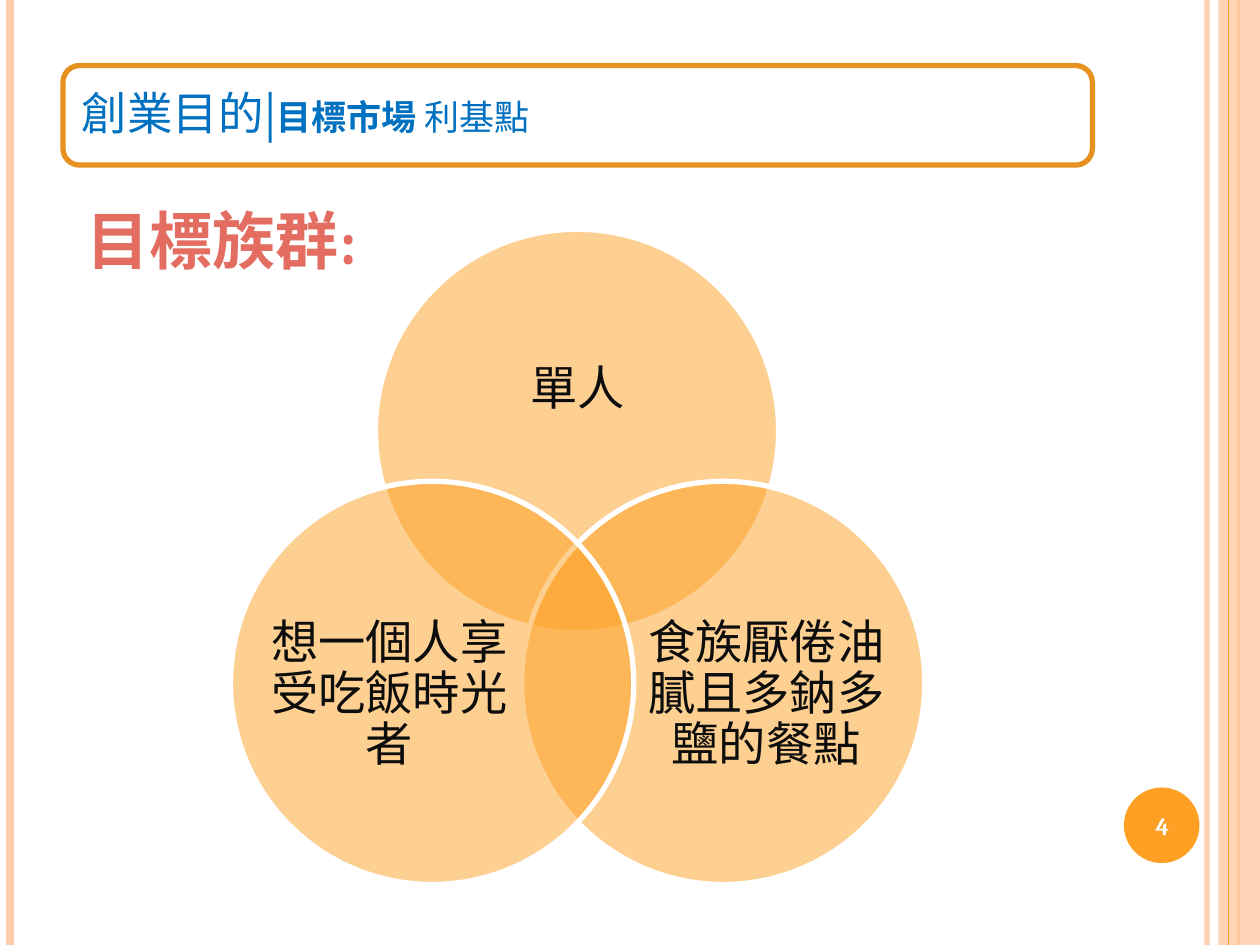
"""Build the target market slide with its three-circle Venn diagram."""
from lxml import etree
from pptx import Presentation
from pptx import util as u
from pptx.dml.color import RGBColor
from pptx.enum import shapes, text
from pptx.oxml import ns

SANS, SERIF = "Noto Sans CJK SC", "Cambria"
ORANGE, PEACH, WHITE, BLUE = "FDA023", "FECDAC", "FFFFFF", "0070C0"


def paint(fill, color, opacity=100):
    """Give a shape, line or font fill a solid colour."""
    fill.solid()
    fill.fore_color.rgb = RGBColor.from_string(color)
    if opacity < 100:
        color_node = fill._xPr.find(".//" + ns.qn("a:srgbClr"))
        etree.SubElement(color_node, ns.qn("a:alpha"), val=str(opacity * 1000))


def add_text(box, runs, font_name, color, align, margins=(0, 0), spacing=1.0,
             anchor=text.MSO_ANCHOR.MIDDLE):
    """Add a text box whose runs are (wording, size, bold)."""
    frame = slide.shapes.add_textbox(*map(u.Inches, box)).text_frame
    frame.word_wrap = True
    frame.vertical_anchor = anchor
    frame.margin_left = frame.margin_right = u.Inches(margins[0])
    frame.margin_top = frame.margin_bottom = u.Inches(margins[1])
    paragraph = frame.paragraphs[0]
    paragraph.alignment = align
    paragraph.line_spacing = spacing
    for wording, size, bold in runs:
        run = paragraph.add_run()
        run.text = wording
        run.font.size = u.Pt(size)
        run.font.bold = bold
        paint(run.font.fill, color)
        run.font.name = font_name
        east_asian = etree.SubElement(run.font._element, ns.qn("a:ea"))
        east_asian.set("typeface", SANS)


presentation = Presentation()
presentation.slide_width = u.Inches(10)
presentation.slide_height = u.Inches(7.5)
slide = presentation.slides.add_slide(presentation.slide_layouts[6])
paint(slide.background.fill, WHITE)

stripes = [
    (9.58, PEACH, 3, 93),
    (0.08, PEACH, 4.5, 100),
    (9.83, ORANGE, 1.5, 100),
    (9.75, ORANGE, 0.75, 100),
]
for x, color, width, opacity in stripes:
    stripe = slide.shapes.add_connector(
        shapes.MSO_CONNECTOR.STRAIGHT, u.Inches(x), 0, u.Inches(x), u.Inches(7.5))
    paint(stripe.line.fill, color, opacity)
    stripe.line.width = u.Pt(width)
    etree.SubElement(stripe._element.spPr, ns.qn("a:effectLst"))
    if x == 9.83:
        band = slide.shapes.add_shape(
            shapes.MSO_SHAPE.RECTANGLE, u.Inches(9.67), 0, u.Inches(0.33), u.Inches(7.5))
        band.shadow.inherit = False
        paint(band.fill, PEACH, 87)
        band.line.fill.background()

badge = slide.shapes.add_shape(
    shapes.MSO_SHAPE.OVAL, u.Inches(8.92), u.Inches(6.25), u.Inches(0.6), u.Inches(0.6))
badge.shadow.inherit = False
paint(badge.fill, ORANGE)
badge.line.fill.background()

title_frame = slide.shapes.add_shape(
    shapes.MSO_SHAPE.ROUNDED_RECTANGLE,
    u.Inches(0.5), u.Inches(0.52), u.Inches(8.17), u.Inches(0.79))
title_frame.shadow.inherit = False
paint(title_frame.fill, WHITE)
paint(title_frame.line.fill, "E69120")
title_frame.line.width = u.Pt(3)
add_text((0.54, 0.56, 8.09, 0.71),
         [("創業目的|", 26, False), ("目標市場 ", 20, True), ("利基點", 20, False)],
         SANS, BLUE, text.PP_ALIGN.LEFT, (0.11, 0.11), 0.9)

circles = [
    (2.98, 1.82, "單人", (3.41, 2.38, 2.35, 1.44)),
    (4.14, 3.82, "食族厭倦油膩且多鈉多鹽的餐點", (5.12, 4.64, 1.92, 1.76)),
    (1.83, 3.82, "想一個人享受吃飯時光者", (2.13, 4.64, 1.92, 1.76)),
]
for left, top, wording, text_area in circles:
    circle = slide.shapes.add_shape(
        shapes.MSO_SHAPE.OVAL, u.Inches(left), u.Inches(top), u.Inches(3.2), u.Inches(3.2))
    circle.shadow.inherit = False
    paint(circle.fill, ORANGE, 50)
    paint(circle.line.fill, WHITE)
    circle.line.width = u.Pt(3)
    add_text(text_area, [(wording, 27, False)], SANS, "0D0D0D",
             text.PP_ALIGN.CENTER, spacing=0.9)

add_text((0.59, 1.55, 2.68, 0.71), [("目標族群:", 36, True)], SERIF, "E36D61",
         text.PP_ALIGN.LEFT, (0.1, 0.05), anchor=text.MSO_ANCHOR.TOP)
add_text((8.89, 6.27, 0.67, 0.57), [("4", 14, True)], SERIF, WHITE,
         text.PP_ALIGN.CENTER, (0.1, 0.05))

presentation.save("out.pptx")
